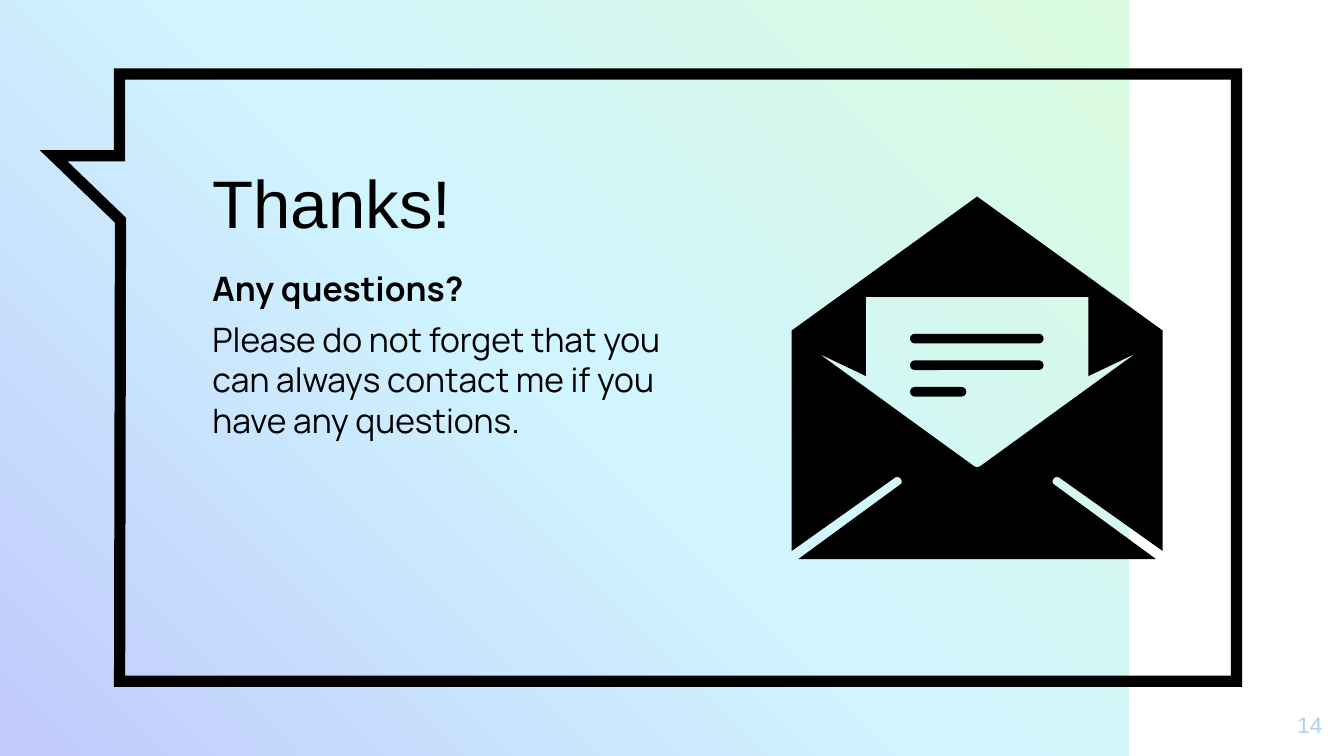
from copy import deepcopy
from dataclasses import dataclass

from lxml.etree import SubElement
from pptx import Presentation
from pptx.dml.color import RGBColor
from pptx.enum.shapes import MSO_SHAPE
from pptx.enum.text import MSO_ANCHOR, MSO_AUTO_SIZE, PP_ALIGN
from pptx.oxml.ns import qn
from pptx.util import Pt

Contour = list[tuple[float, float]]
BLACK = "000000"
GRADIENT = [(0, "C0CAFC"), (0.5, "D0F5FF"), (1, "DAFBDD")]
ENVELOPE_CENTER = 523.5
BUBBLE: Contour = [
    (64.1, 39.6), (662.4, 39.6), (662.4, 365), (64.1, 365),
    (64.6, 118), (28.8, 83.5), (64.1, 83.5),
]
ENVELOPE_HALF: Contour = [
    (0, 105.3), (99.4, 177.1), (99.4, 295.2), (44.6, 256.3), (43.6, 255.6),
    (42.1, 255.6), (41, 256.3), (40.3, 257.8), (40.6, 259), (41.8, 260),
    (95.8, 299.5),
]
OPENING_HALF: Contour = [
    (0, 250.4), (1.6, 249.8), (84.6, 189.6), (59.6, 201.5), (59.6, 159.1),
]


@dataclass
class Box:
    left: float
    top: float
    width: float
    height: float


@dataclass
class TextLine:
    text: str
    size: float
    font: str
    color: str = BLACK
    bold: bool = False
    space_before: float = 0
    alignment: PP_ALIGN = PP_ALIGN.LEFT


def color_from(value: str) -> RGBColor:
    return RGBColor.from_string(value)


def place(shape, box: Box) -> None:
    shape.left, shape.top = Pt(box.left), Pt(box.top)
    shape.width, shape.height = Pt(box.width), Pt(box.height)


def fill_plain(shape, color: str) -> None:
    shape.shadow.inherit = False
    shape.fill.solid()
    shape.fill.fore_color.rgb = color_from(color)
    shape.line.fill.background()


def draw_preset(slide, kind: MSO_SHAPE, box: Box, color: str):
    shape = slide.shapes.add_shape(
        kind, Pt(box.left), Pt(box.top), Pt(box.width), Pt(box.height)
    )
    fill_plain(shape, color)
    return shape


def draw_outline(slide, contours: list[Contour]):
    scaled = [[(Pt(x), Pt(y)) for x, y in contour] for contour in contours]
    builder = slide.shapes.build_freeform(*scaled[0][0], scale=1.0)
    builder.add_line_segments(scaled[0][1:], close=True)
    for contour in scaled[1:]:
        builder.move_to(*contour[0])
        builder.add_line_segments(contour[1:], close=True)
    return builder.convert_to_shape()


def mirrored(half: Contour, center: float) -> Contour:
    right = [(center + offset, y) for offset, y in half]
    left = [(center - offset, y) for offset, y in reversed(half) if offset > 0]
    return right + left


def draw_gradient_panel(slide, box: Box) -> None:
    panel = draw_preset(slide, MSO_SHAPE.RECTANGLE, box, GRADIENT[0][1])
    panel.fill.gradient()
    panel.fill.gradient_angle = 45
    stop_list = panel._element.spPr.find(qn("a:gradFill")).find(qn("a:gsLst"))
    stop_list.insert(1, deepcopy(stop_list[0]))
    for stop, (position, color) in zip(panel.fill.gradient_stops, GRADIENT):
        stop.position = position
        stop.color.rgb = color_from(color)


def draw_bubble(slide) -> None:
    bubble = draw_outline(slide, [BUBBLE])
    bubble.shadow.inherit = False
    bubble.fill.background()
    bubble.line.width = Pt(6)
    bubble.line.color.rgb = color_from(BLACK)
    SubElement(bubble.line._get_or_add_ln(), qn("a:miter"), lim="800000")


def draw_envelope(slide) -> None:
    halves = [ENVELOPE_HALF, OPENING_HALF]
    envelope = draw_outline(slide, [mirrored(half, ENVELOPE_CENTER) for half in halves])
    fill_plain(envelope, BLACK)
    for row, width in enumerate([71.6, 71.6, 30.2]):
        box = Box(487.5, 178.8 + 14.25 * row, width, 5.2)
        bar = draw_preset(slide, MSO_SHAPE.ROUNDED_RECTANGLE, box, BLACK)
        bar.adjustments[0] = 0.5


def write_text(shape, box: Box, lines: list[TextLine], anchor: MSO_ANCHOR) -> None:
    place(shape, box)
    frame = shape.text_frame
    frame.text = "\n".join(line.text for line in lines)
    frame.word_wrap = True
    frame.auto_size = MSO_AUTO_SIZE.NONE
    frame.vertical_anchor = anchor
    frame.margin_left = frame.margin_right = Pt(7.2)
    frame.margin_top = frame.margin_bottom = Pt(7.2)
    for paragraph, line in zip(frame.paragraphs, lines):
        paragraph.alignment = line.alignment
        paragraph.space_before = Pt(line.space_before)
        font = paragraph.runs[0].font
        font.name = line.font
        font.size = Pt(line.size)
        font.bold = line.bold
        font.color.rgb = color_from(line.color)


def main() -> None:
    presentation = Presentation()
    presentation.slide_width, presentation.slide_height = Pt(720), Pt(405)
    slide = presentation.slides.add_slide(presentation.slide_layouts[0])
    title, body = slide.shapes.title, slide.placeholders[1]

    draw_gradient_panel(slide, Box(0, 0, 604.8, 405))
    draw_bubble(slide)
    for placeholder in (title, body):
        slide.shapes._spTree.append(placeholder._element)

    write_text(
        title, Box(106.6, 78.5, 285, 58.3),
        [TextLine("Thanks!", 36, "Arial")], MSO_ANCHOR.BOTTOM,
    )
    message = "Please do not forget that you can always contact me if you have any questions."
    write_text(
        body, Box(106.6, 136.1, 285, 164.9),
        [
            TextLine("Any questions?", 18, "Manrope", bold=True, space_before=6),
            TextLine(message, 18, "Manrope", space_before=6),
        ],
        MSO_ANCHOR.TOP,
    )
    draw_envelope(slide)
    number = slide.shapes.add_textbox(0, 0, 0, 0)
    write_text(
        number, Box(672.3, 373.9, 43.2, 31),
        [TextLine("14", 12, "Arial", "AFCFEC", alignment=PP_ALIGN.RIGHT)],
        MSO_ANCHOR.TOP,
    )
    presentation.save("out.pptx")


if __name__ == "__main__":
    main()
